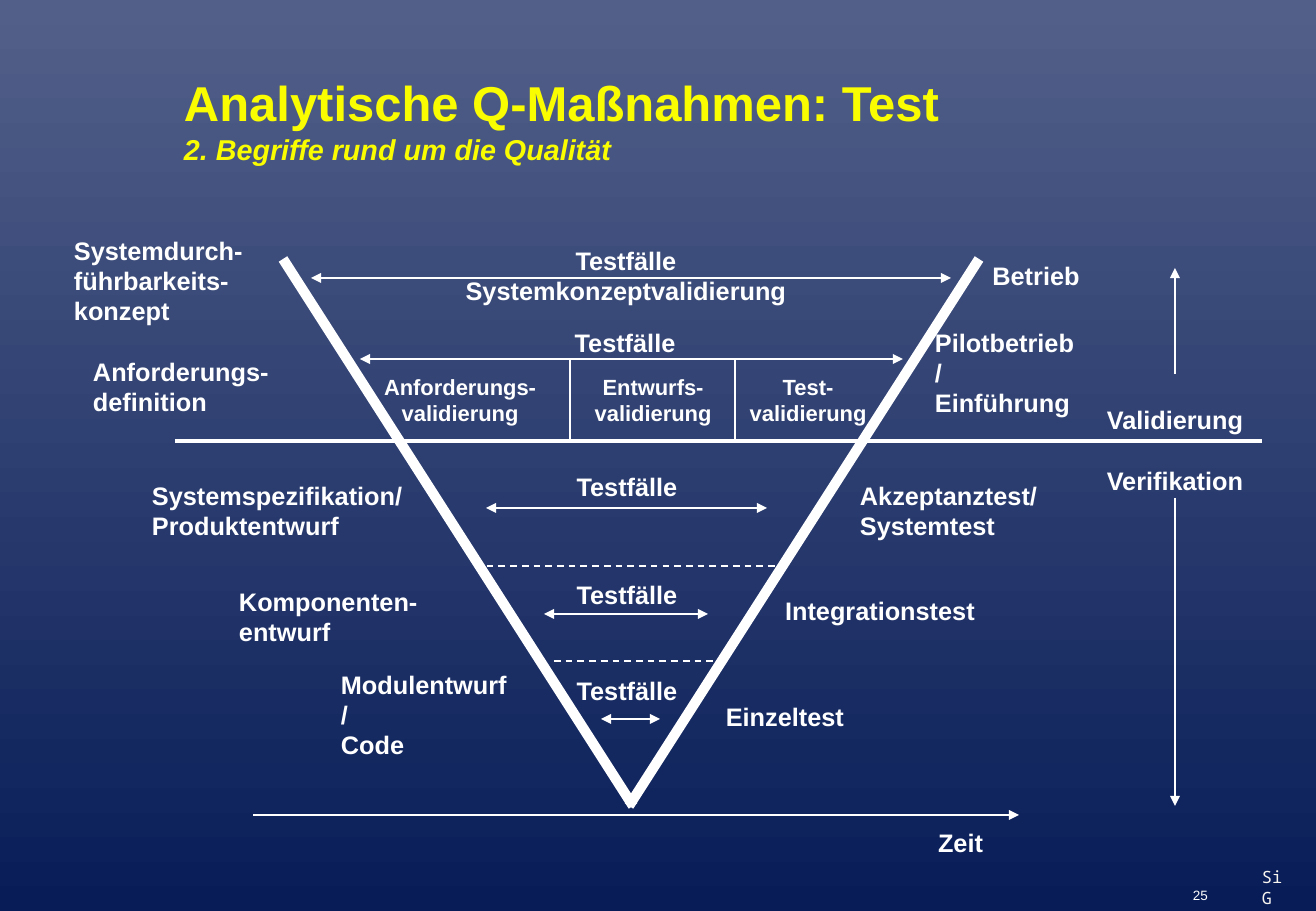
from pptx import Presentation
from pptx.dml.color import RGBColor
from pptx.enum.dml import MSO_LINE
from pptx.enum.shapes import MSO_CONNECTOR
from pptx.enum.text import MSO_ANCHOR, PP_ALIGN
from pptx.oxml.ns import qn
from pptx.util import Pt
from lxml import etree

PX = 914400 / 121.5
LEFT, CENTER, RIGHT = PP_ALIGN.LEFT, PP_ALIGN.CENTER, PP_ALIGN.RIGHT
TOP, MIDDLE, BOTTOM = MSO_ANCHOR.TOP, MSO_ANCHOR.MIDDLE, MSO_ANCHOR.BOTTOM
DASH = MSO_LINE.DASH
STRAIGHT = MSO_CONNECTOR.STRAIGHT
rgb = RGBColor.from_string
WHITE, YELLOW = "FFFFFF", "FAFD00"

prs = Presentation()
prs.slide_width, prs.slide_height = round(1316 * PX), round(911 * PX)
s = prs.slides.add_slide(prs.slide_layouts[6])


def add_text(text, x, y, w, h, size=15, color=WHITE, bold=True, font="Arial", align=CENTER,
             anchor=MIDDLE, spacing=0.98, wrap=False, inset=(6, 2)):
    box = s.shapes.add_textbox(*[round(v * PX) for v in (x, y, w, h)])
    tf = box.text_frame
    tf.word_wrap, tf.vertical_anchor = wrap, anchor
    tf.margin_left = tf.margin_right = round(inset[0] * PX)
    tf.margin_top = tf.margin_bottom = round(inset[1] * PX)
    tf.text = text
    for p in tf.paragraphs:
        p.alignment, p.line_spacing = align, spacing
        p.font.name, p.font.size, p.font.bold = font, Pt(size), bold
        p.font.color.rgb = rgb(color)
    return tf


def add_line(x1, y1, x2, y2, width=1, dash=None, ends=()):
    c = s.shapes.add_connector(STRAIGHT, *[round(v * PX) for v in (x1, y1, x2, y2)])
    c.line.width, c.line.color.rgb = Pt(width), rgb(WHITE)
    if dash:
        c.line.dash_style = dash
    for end in ends:
        etree.SubElement(c.line._get_or_add_ln(), qn(f"a:{end}"), type="triangle")
    etree.SubElement(c._element.spPr, qn("a:effectLst"))


# Background
fill = s.background.fill
fill.gradient()
fill.gradient_angle = 270
for stop, color in zip(fill.gradient_stops, ("526089", "081D58")):
    stop.color.rgb = rgb(color)

# Title and subtitle
tf = add_text("Analytische Q-Maßnahmen: Test", 178, 73, 772, 96, size=29, color=YELLOW,
              align=LEFT, anchor=BOTTOM)
p = tf.paragraphs[0]
p.add_line_break()
r = p.add_run()
r.text = "2. Begriffe rund um die Qualität"
r.font.size, r.font.italic = Pt(17), True

# V shape, dividing line and time axis
for x1, x2 in ((629, 979), (633, 283)):
    add_line(x1, 806, x2, 259, width=6)
add_line(175, 441, 1262, 441, width=2.25)
add_line(253, 815, 1019, 815, ends=["tailEnd"])
add_text("Zeit", 930, 827, 61, 34)

# Test case arrows between the two arms
for x1, x2, y in ((311, 951, 278), (360, 903, 359), (486, 767, 508),
                  (544, 708, 614), (601, 660, 719)):
    add_line(x1, y, x2, y, ends=["headEnd", "tailEnd"])
for x1, x2, y in ((475, 786, 566), (554, 728, 661)):
    add_line(x1, y, x2, y, dash=DASH)
add_text("Testfälle\nSystemkonzeptvalidierung", 456, 244, 340, 65)
for x, y in ((565, 327), (567, 471), (567, 579), (567, 675)):
    add_text("Testfälle", x, y, 120, 34)

# Validation compartments
for x in (570, 735):
    add_line(x, 360, x, 442)
for text, x, w in (("Anforderungs-", 375, 170), ("Entwurfs-", 585, 136), ("Test-", 740, 136)):
    add_text(f"{text}\nvalidierung", x, 372, w, 57, size=13)

# Left arm: development phases
for text, x, y, w, h in (
    ("Systemdurch-\nführbarkeits-\nkonzept", 68, 235, 190, 93),
    ("Anforderungs-\ndefinition", 87, 355, 200, 65),
    ("Systemspezifikation/\nProduktentwurf", 146, 479, 280, 65),
    ("Komponenten-\nentwurf", 233, 585, 200, 65),
):
    add_text(text, x, y, w, h, align=LEFT)
add_text("Modulentwurf/\nCode", 335, 683, 181, 65, align=LEFT, wrap=True)

# Right arm: test phases
add_text("Betrieb", 981, 260, 110, 34)
add_text("Pilotbetrieb/\nEinführung", 929, 341, 155, 65, align=LEFT, wrap=True)
add_text("Akzeptanztest/\nSystemtest", 854, 479, 205, 65, align=LEFT)
add_text("Integrationstest", 774, 595, 212, 34)
add_text("Einzeltest", 710, 701, 150, 34)

# Validation and verification directions
add_text("Validierung\nVerifikation", 1095, 372, 160, 126, spacing=2.0)
for y1, y2 in ((374, 268), (498, 806)):
    add_line(1175, y1, 1175, y2, ends=["tailEnd"])

# Footer
add_text("25", 700, 883, 519, 26, size=8, color="FDFDFD", bold=False, align=RIGHT,
         anchor=TOP, spacing=0.9, wrap=True, inset=(11, 6))
add_text("SiG", 1250, 861, 51, 32, size=10, color="F7F4EF", bold=False, font="Noto Sans Mono",
         align=LEFT, anchor=TOP, spacing=1.0, wrap=True, inset=(12, 6))

prs.save("out.pptx")
